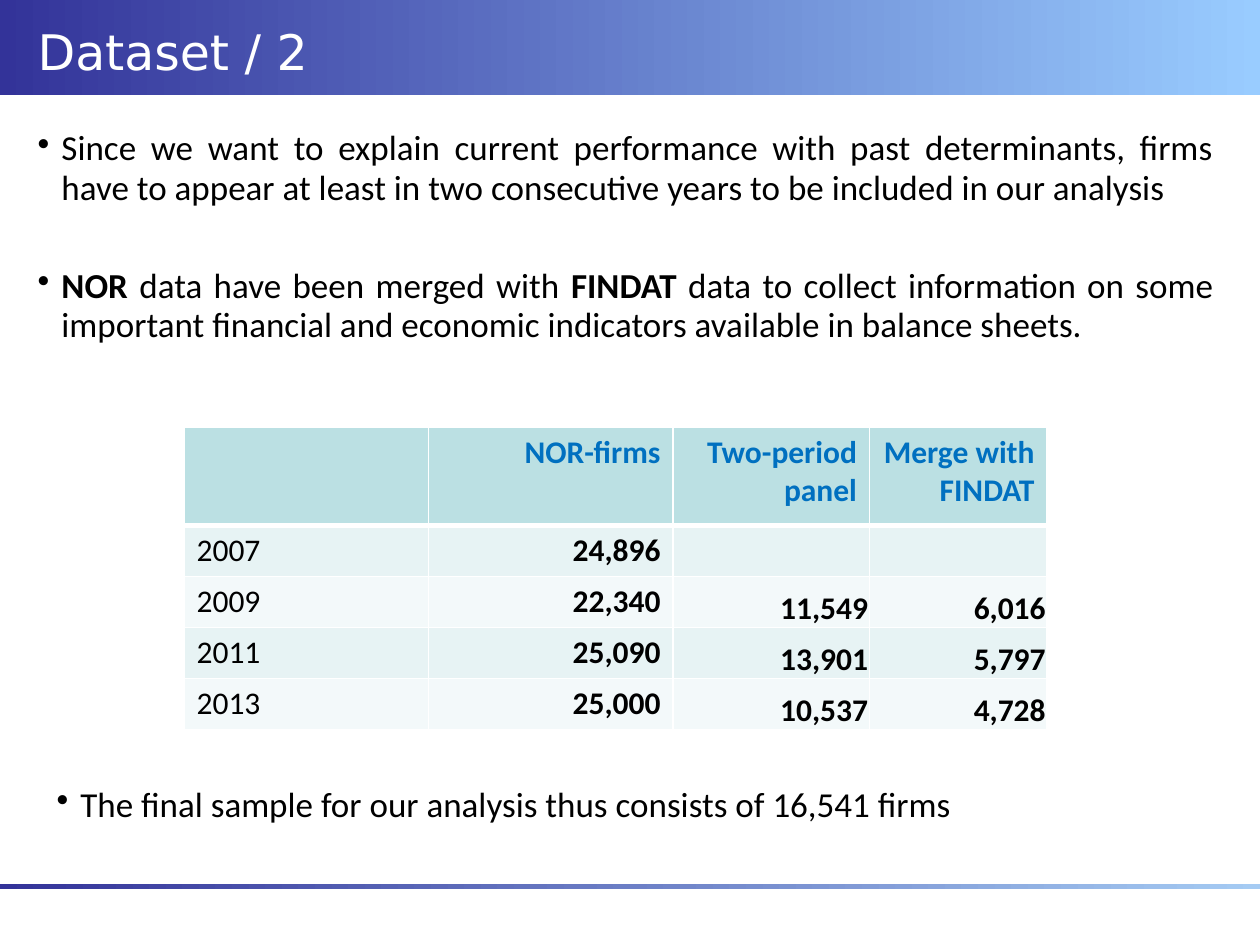
from dataclasses import dataclass

from lxml import etree
from pptx import Presentation
from pptx.dml.color import RGBColor
from pptx.enum.shapes import MSO_SHAPE
from pptx.enum.text import MSO_ANCHOR, MSO_AUTO_SIZE, PP_ALIGN
from pptx.oxml.ns import qn
from pptx.util import Cm, Pt

RECT = MSO_SHAPE.RECTANGLE
TOP, BOTTOM = MSO_ANCHOR.TOP, MSO_ANCHOR.BOTTOM
LEFT, RIGHT, JUSTIFY = PP_ALIGN.LEFT, PP_ALIGN.RIGHT, PP_ALIGN.JUSTIFY
GROW = MSO_AUTO_SIZE.SHAPE_TO_FIT_TEXT


@dataclass
class Theme:
    navy: str = "333399"
    sky: str = "99CCFF"
    pale_sky: str = "A5CBF3"
    white: str = "FFFFFF"
    black: str = "000000"
    blue: str = "0070C0"
    header: str = "BBE0E3"
    bands: tuple = ("E7F3F4", "F3F9FA")
    title_font: str = "DejaVu Sans"
    body_font: str = "Calibri"
    title_size: int = 28
    body_size: int = 20
    table_size: int = 18


theme = Theme()


def add_run(p, text, name, size, color, bold=False):
    r = p.add_run()
    r.text = text
    for key, value in {"name": name, "size": Pt(size), "bold": bold}.items():
        setattr(r.font, key, value)
    r.font.color.rgb = RGBColor.from_string(color)


def add_bullets(s, left, top, width, height, paragraphs):
    tf = s.shapes.add_textbox(Cm(left), Cm(top), Cm(width), Cm(height)).text_frame
    tf.word_wrap = True
    tf.auto_size = GROW
    for i, runs in enumerate(paragraphs):
        p = tf.add_paragraph() if i else tf.paragraphs[0]
        pPr = p._p.get_or_add_pPr()
        pPr.set("marL", str(Cm(0.48)))
        pPr.set("indent", str(-Cm(0.48)))
        etree.SubElement(pPr, qn("a:buChar"), char="•")
        spacing = {"alignment": JUSTIFY, "line_spacing": 0.93, "space_after": Pt(6)}
        if i:
            spacing["space_before"] = Pt(28)
        for key, value in spacing.items():
            setattr(p, key, value)
        for text, bold in runs:
            add_run(p, text, theme.body_font, theme.body_size, theme.black, bold)


prs = Presentation()
prs.slide_width, prs.slide_height = Cm(25.4), Cm(19.05)
s = prs.slides.add_slide(prs.slide_layouts[6])

for top, height, end in ((0, 1.92, theme.sky), (17.82, 0.1, theme.pale_sky)):
    sp = s.shapes.add_shape(RECT, 0, Cm(top), prs.slide_width, Cm(height))
    sp.shadow.inherit = False
    sp.line.fill.background()
    sp.fill.gradient()
    sp.fill.gradient_angle = 0
    for stop, color, position in zip(sp.fill.gradient_stops, (theme.navy, end), (0, 1)):
        stop.color.rgb = RGBColor.from_string(color)
        stop.position = position

tf = s.shapes.add_textbox(Cm(0.51), Cm(0.3), Cm(24.5), Cm(1.93)).text_frame
tf.word_wrap = True
add_run(tf.paragraphs[0], "Dataset / 2", theme.title_font, theme.title_size, theme.white)

add_bullets(s, 0.51, 2.49, 24.2, 4.65, [
    [("Since we want to explain current performance with past determinants, firms "
      "have to appear at least in two consecutive years to be included in our analysis", False)],
    [("NOR ", True), ("data have been merged with ", False), ("FINDAT ", True),
     ("data to collect information on some important financial and economic "
      "indicators available in balance sheets.", False)],
])

rows = [
    ("", "NOR-firms", "Two-period panel", "Merge with FINDAT"),
    ("2007", "24,896", "", ""),
    ("2009", "22,340", "11,549", "6,016"),
    ("2011", "25,090", "13,901", "5,797"),
    ("2013", "25,000", "10,537", "4,728"),
]
col_widths = (4.93, 4.93, 3.96, 3.58)
row_heights = [1.98] + [1.03] * 4
tbl = s.shapes.add_table(len(rows), len(col_widths), Cm(3.71), Cm(8.61),
                         Cm(sum(col_widths)), Cm(sum(row_heights))).table
tbl.first_row = tbl.horz_banding = False
for col, width in zip(tbl.columns, col_widths):
    col.width = Cm(width)
for row, height in zip(tbl.rows, row_heights):
    row.height = Cm(height)

for i, values in enumerate(rows):
    for j, text in enumerate(values):
        cell = tbl.cell(i, j)
        tcPr = cell._tc.get_or_add_tcPr()
        for side in "LRTB":
            thick = (i, side) in ((0, "B"), (1, "T"))
            ln = etree.SubElement(tcPr, qn(f"a:ln{side}"), w=str(Pt(3 if thick else 1)))
            fill = etree.SubElement(ln, qn("a:solidFill"))
            etree.SubElement(fill, qn("a:srgbClr"), val=theme.white)
        cell.fill.solid()
        cell.fill.fore_color.rgb = RGBColor.from_string(
            theme.bands[(i - 1) % 2] if i else theme.header)
        cell.vertical_anchor = TOP
        p = cell.text_frame.paragraphs[0]
        p.alignment = RIGHT if j else LEFT
        if i > 1 and j > 1:
            tight = {"vertical_anchor": BOTTOM, "margin_left": Cm(0.03),
                     "margin_right": Cm(0.03), "margin_top": Cm(0.03), "margin_bottom": 0}
            for key, value in tight.items():
                setattr(cell, key, value)
        if text:
            add_run(p, text, theme.body_font, theme.table_size,
                    theme.black if i else theme.blue, j > 0)

add_bullets(s, 0.89, 15.72, 24.2, 2.1, [
    [("The final sample for our analysis thus consists of 16,541 firms", False)],
])

prs.save("out.pptx")
